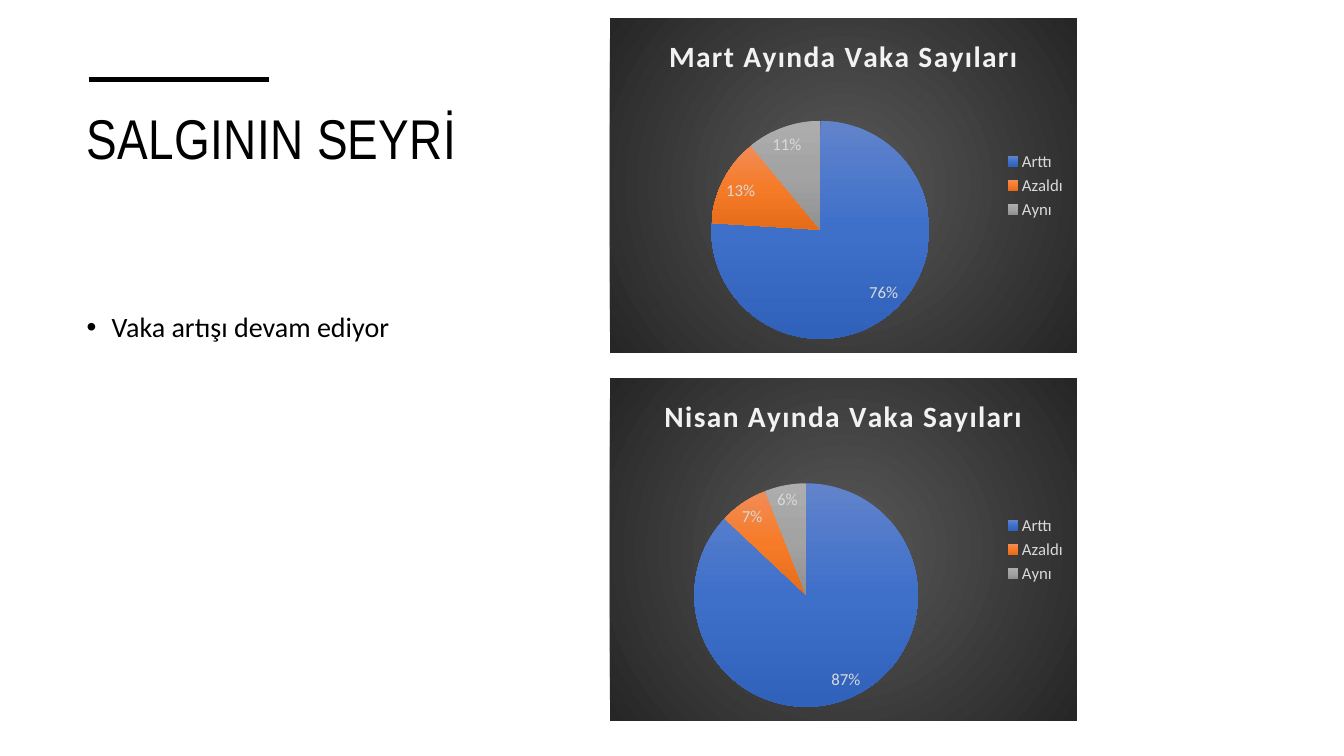
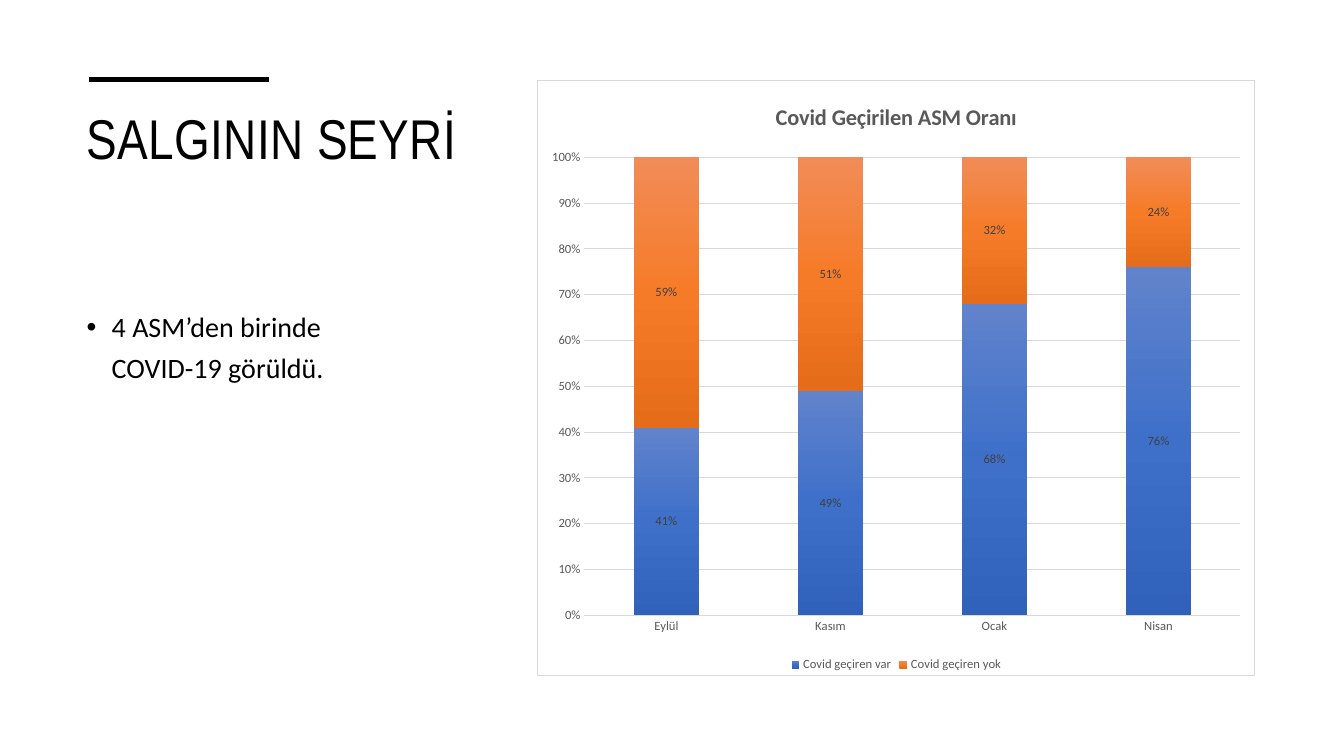
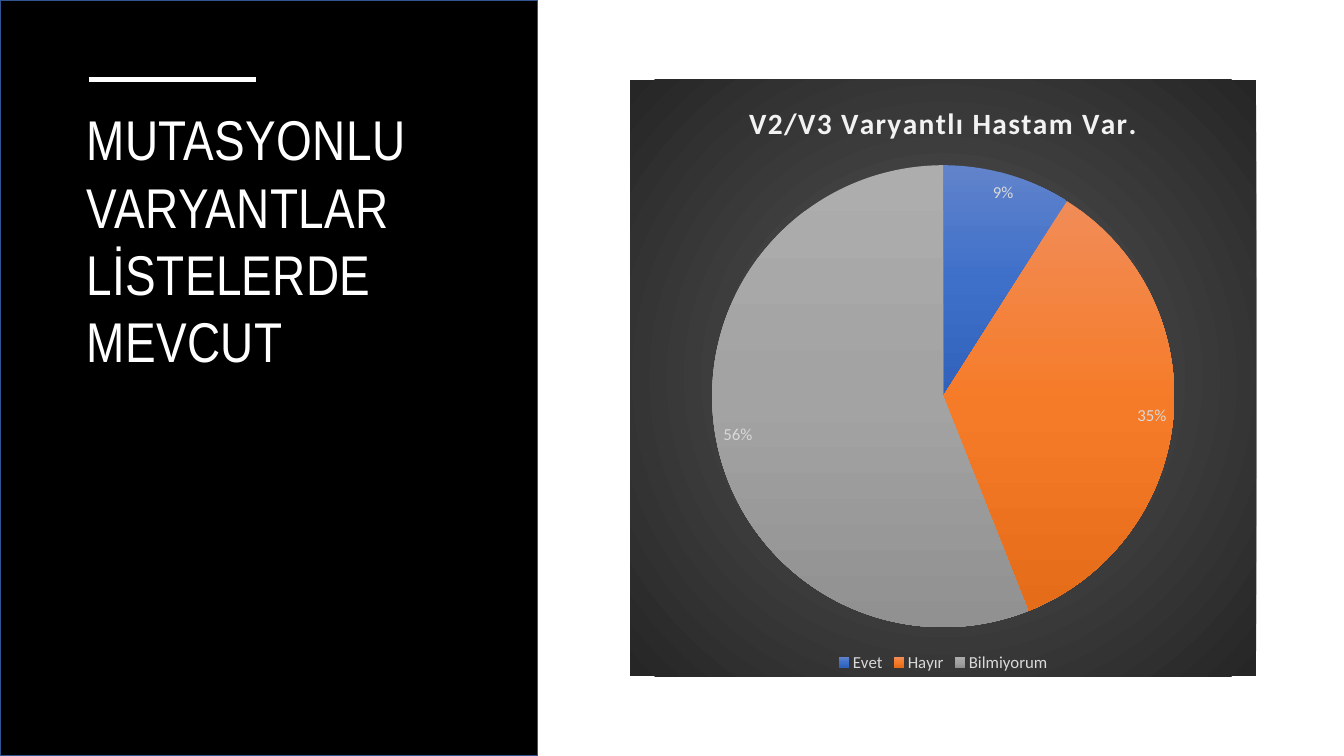
from lxml import etree
from pptx import Presentation, util as u
from pptx.chart.data import CategoryChartData
from pptx.dml.color import RGBColor
from pptx.enum import chart as ch, shapes, text
from pptx.oxml import parse_xml
from pptx.oxml.ns import qn

# Content
SEYIR = "SALGININ SEYRİ"
TREND = ["Arttı", "Azaldı", "Aynı"]
SLIDES = [
    dict(title=SEYIR, note="Vaka artışı devam ediyor", charts=[
        dict(kind="pie", at=(6.05, 0.18, 4.63, 3.32), legend="RIGHT",
             title="Mart Ayında Vaka Sayıları", cats=TREND,
             series={"Series 1": (76, 13, 11)}),
        dict(kind="pie", at=(6.05, 3.75, 4.63, 3.4), legend="RIGHT",
             title="Nisan Ayında Vaka Sayıları", cats=TREND,
             series={"Series 1": (87, 7, 6)})]),
    dict(title=SEYIR, note="4 ASM’den birinde\vCOVID-19 görüldü.", charts=[
        dict(kind="bar", at=(5.33, 0.79, 7.12, 5.92), legend="BOTTOM",
             title="Covid Geçirilen ASM Oranı",
             cats=["Eylül", "Kasım", "Ocak", "Nisan"],
             series={"Covid geçiren var": (0.41, 0.49, 0.68, 0.76),
                     "Covid geçiren yok": (0.59, 0.51, 0.32, 0.24)})]),
    dict(title="MUTASYONLU VARYANTLAR LİSTELERDE MEVCUT", dark=True, charts=[
        dict(kind="pie", at=(6.25, 0.79, 6.21, 5.92), legend="BOTTOM",
             title="V2/V3 Varyantlı Hastam Var.",
             cats=["Evet", "Hayır", "Bilmiyorum"],
             series={"Series 1": (9, 35, 56)})]),
]

# Shared look
HEX = dict(ink="000000", paper="FFFFFF", edge="325491", grid="D9D9D9",
           pale="F2F2F2", gray="595959", deep="404040", night="262626")
SHADES = [("6183CB", "3E70CA", "3062BB"), ("F18C57", "F67B28", "E56C19"),
          ("ADADAD", "A3A3A3", "919191")]
LOOK = dict(
    pie=dict(type=ch.XL_CHART_TYPE.PIE, head=(21, "pale", 100),
             size=12, tone="grid", label="grid"),
    bar=dict(type=ch.XL_CHART_TYPE.COLUMN_STACKED_100, head=(16, "gray", 0),
             size=9, tone="gray", label="deep"))
A = "http://schemas.openxmlformats.org/drawingml/2006/main"
C = "http://schemas.openxmlformats.org/drawingml/2006/chart"


def rgb(key):
    return RGBColor.from_string(HEX[key])


def put(obj, **vals):
    for key, val in vals.items():
        setattr(obj, key, val)


def style(font, size, tone, name="Calibri", bold=False):
    put(font, size=u.Pt(size), name=name, bold=bold)
    font.color.rgb = rgb(tone)


def stroke(line, tone, width):
    line.color.rgb = rgb(tone)
    line.width = u.Pt(width)


def blend(hues, way='<a:lin ang="5400000" scaled="0"/>'):
    step = 100000 // (len(hues) - 1)
    stops = "".join(f'<a:gs pos="{i * step}"><a:srgbClr val="{hue}"/></a:gs>'
                    for i, hue in enumerate(hues))
    return f'<a:gradFill xmlns:a="{A}"><a:gsLst>{stops}</a:gsLst>{way}</a:gradFill>'


def shade(part, hues):
    part.format._element.get_or_add_spPr().insert(0, parse_xml(blend(hues)))


def back(chart, kind):
    if kind == "pie":
        fill = blend((HEX["gray"], HEX["night"]),
                     '<a:path path="circle"><a:fillToRect l="50000" t="50000" '
                     'r="50000" b="50000"/></a:path>') + "<a:ln><a:noFill/></a:ln>"
    else:
        fill = (f'<a:solidFill><a:srgbClr val="{HEX["paper"]}"/></a:solidFill>'
                f'<a:ln w="9525"><a:solidFill><a:srgbClr val="{HEX["grid"]}"/>'
                '</a:solidFill></a:ln>')
    chart._chartSpace.chart.addnext(parse_xml(
        f'<c:spPr xmlns:c="{C}" xmlns:a="{A}">{fill}</c:spPr>'))


# Title, rule and note
def head(slide, title, dark):
    tone = "paper" if dark else "ink"
    if dark:
        band = slide.shapes.add_shape(shapes.MSO_SHAPE.RECTANGLE, 0, 0,
                                      u.Inches(5.33), u.Inches(7.5))
        band.shadow.inherit = False
        band.fill.solid()
        band.fill.fore_color.rgb = rgb("ink")
        stroke(band.line, "edge", 1)
        slide.shapes._spTree.insert(2, band._element)
    box = slide.shapes.title
    place(box, (0.76, 0.99, 4.07, 4.01) if dark else (0.76, 0.98, 3.98, 1.72))
    frame = box.text_frame
    put(frame, text=title, word_wrap=True, auto_size=text.MSO_AUTO_SIZE.NONE,
        vertical_anchor=text.MSO_ANCHOR.TOP)
    para = frame.paragraphs[0]
    para.alignment = text.PP_ALIGN.LEFT
    style(para.runs[0].font, 40, tone, "Arial Narrow")
    para.runs[0].font._element.set("spc", "30")
    y = u.Inches(0.79)
    rule = slide.shapes.add_connector(shapes.MSO_CONNECTOR.STRAIGHT, u.Inches(0.88),
                                      y, u.Inches(2.54 if dark else 2.67), y)
    stroke(rule.line, tone, 3.5)
    etree.SubElement(rule._element.spPr, qn("a:effectLst"))


def place(box, at):
    put(box, **dict(zip(("left", "top", "width", "height"), map(u.Inches, at))))


def note(slide, words):
    box = slide.shapes.add_textbox(*map(u.Inches, (0.76, 2.96, 3.92, 3.83)))
    box.text_frame.word_wrap = True
    para = box.text_frame.paragraphs[0]
    put(para, text=words, line_spacing=1.2, space_before=u.Pt(10))
    for run in para.runs:
        style(run.font, 20, "ink")
    prop = para._p.get_or_add_pPr()
    put_in = {"marL": u.Inches(0.25), "indent": -u.Inches(0.25)}
    for key, val in put_in.items():
        prop.set(key, str(val))
    etree.SubElement(prop, qn("a:buFont")).set("typeface", "Arial")
    etree.SubElement(prop, qn("a:buChar")).set("char", "•")


# Charts
def draw(slide, kind, at, legend, title, cats, series):
    look = LOOK[kind]
    data = CategoryChartData()
    data.categories = cats
    for name, vals in series.items():
        data.add_series(name, vals)
    chart = slide.shapes.add_chart(look["type"], *map(u.Inches, at), data).chart
    style(chart.font, 10, "ink")
    back(chart, kind)

    chart.has_title = True
    frame = chart.chart_title.text_frame
    frame.text = title
    size, tone, gap = look["head"]
    font = frame.paragraphs[0].runs[0].font
    style(font, size, tone, bold=True)
    font._element.set("spc", str(gap))
    chart.chart_title.include_in_layout = False

    chart.has_legend = True
    put(chart.legend, position=ch.XL_LEGEND_POSITION[legend], include_in_layout=False)
    style(chart.legend.font, look["size"], look["tone"])

    plot = chart.plots[0]
    plot.vary_by_categories = kind == "pie"
    for ser in plot.series:
        labels = ser.data_labels
        style(labels.font, look["size"], look["label"])
        put(labels, number_format="0%", number_format_is_linked=False,
            show_value=kind == "bar", show_percentage=kind == "pie")
        if kind == "pie":
            labels.position = ch.XL_LABEL_POSITION.BEST_FIT
    if kind == "pie":
        parts = [plot.series[0].points[i] for i in range(len(cats))]
    else:
        parts = plot.series
        put(plot, gap_width=150, overlap=100)
        axes(chart, look)
    for part, hues in zip(parts, SHADES):
        shade(part, hues)


def axes(chart, look):
    for axis in (chart.category_axis, chart.value_axis):
        put(axis, major_tick_mark=ch.XL_TICK_MARK.NONE,
            minor_tick_mark=ch.XL_TICK_MARK.NONE)
        style(axis.tick_labels.font, look["size"], look["tone"])
    stroke(chart.category_axis.format.line, "grid", 1)
    scale = chart.value_axis
    scale.format.line.fill.background()
    put(scale.tick_labels, number_format="0%", number_format_is_linked=False)
    stroke(scale.major_gridlines.format.line, "grid", 0.75)


def main():
    prs = Presentation()
    put(prs, slide_width=u.Inches(13.33), slide_height=u.Inches(7.5))
    for item in SLIDES:
        slide = prs.slides.add_slide(prs.slide_layouts[5])
        head(slide, item["title"], item.get("dark", False))
        if "note" in item:
            note(slide, item["note"])
        for spec in item["charts"]:
            draw(slide, **spec)
    prs.save("out.pptx")


if __name__ == "__main__":
    main()
